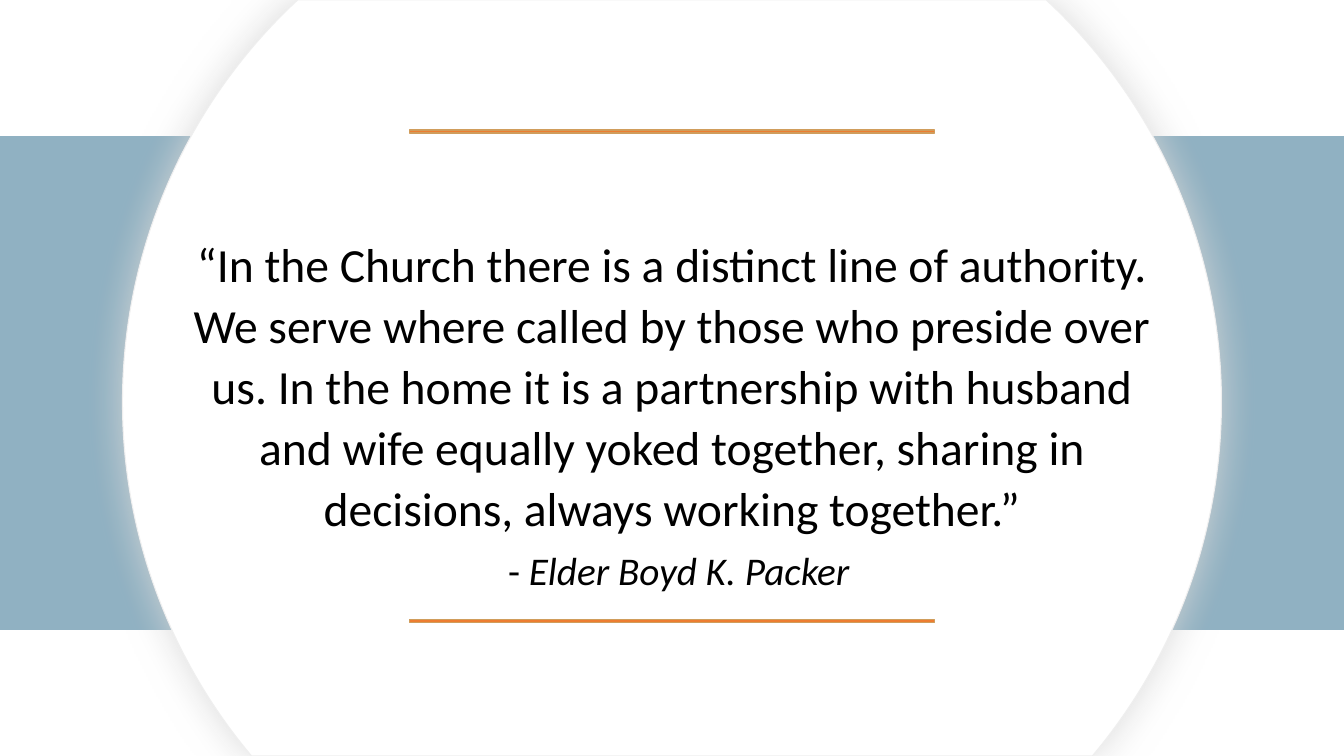
from math import asin, cos, pi, sin, tan

from lxml.etree import SubElement
from pptx import Presentation
from pptx.dml.color import RGBColor
from pptx.enum.shapes import MSO_SHAPE
from pptx.enum.text import MSO_ANCHOR, MSO_AUTO_SIZE, PP_ALIGN
from pptx.oxml.ns import qn
from pptx.util import Inches, Pt

# Content
QUOTE = (
    "“In the Church there is a distinct line of authority. "
    "We serve where called by those who preside over us. "
    "In the home it is a partnership with husband and wife equally yoked "
    "together, sharing in decisions, always working together.”"
)
AUTHOR = [("- ", False), ("Elder Boyd K. Packer", True)]

# Layout in inches
WIDE, HIGH = 13.33, 7.5
MID = WIDE / 2
BAND = (0, 1.35, WIDE, 4.9)
RULE_W, RULE_H = 5.2, 0.03
RULE_TOPS = (1.29, 6.15)
DISC_Y, DISC_R = 3.99, 5.45
UNITS = 1000  # outline units per inch


def color(code):
    return RGBColor.from_string(code)


def paint(shape, fill, line):
    shape.shadow.inherit = False
    shape.fill.solid()
    shape.fill.fore_color.rgb = color(fill)
    shape.line.color.rgb = color(line)
    shape.line.width = Pt(0.75)


def place(shape, *box):
    shape.left, shape.top, shape.width, shape.height = map(Inches, box)


def write(shape, runs, size, align=PP_ALIGN.LEFT, space=1.0,
          anchor=MSO_ANCHOR.MIDDLE):
    frame = shape.text_frame
    frame.auto_size = MSO_AUTO_SIZE.NONE
    frame.word_wrap = True
    frame.vertical_anchor = anchor
    para = frame.paragraphs[0]
    para.alignment, para.line_spacing = align, space
    for text, slant in runs:
        run = para.add_run()
        run.text = text
        run.font.name, run.font.size = "Calibri", Pt(size)
        run.font.italic = slant
        run.font.color.rgb = color("000000")


def bar(slide, box, fill, line):
    shape = slide.shapes.add_shape(MSO_SHAPE.RECTANGLE, *map(Inches, box))
    paint(shape, fill, line)


def spot(turn, pull=0):
    # Point on the circle, moved along its tangent by pull radii
    x = MID + DISC_R * (cos(turn) - pull * sin(turn))
    y = DISC_Y + DISC_R * (sin(turn) + pull * cos(turn))
    return round(x * UNITS), round(y * UNITS)


def bend(line, start, end):
    # Turn one straight segment into a circular arc
    pull = 4 / 3 * tan((end - start) / 4)
    line.tag = qn("a:cubicBezTo")
    line.remove(line[0])
    for x, y in (spot(start, pull), spot(end, -pull), spot(end)):
        SubElement(line, qn("a:pt"), x=str(x - round((MID - DISC_R) * UNITS)),
                   y=str(y))


def disc(slide):
    # Circle cut off by the top and bottom edges of the slide
    high, low = asin(-DISC_Y / DISC_R), asin((HIGH - DISC_Y) / DISC_R)
    turns = [pi - high, high, 0, low, pi - low, pi, pi - high]
    points = [spot(turn) for turn in turns]
    form = slide.shapes.build_freeform(*points[0], scale=Inches(1) / UNITS)
    form.add_line_segments(points[1:], close=True)
    shape = form.convert_to_shape()
    lines = list(shape._element.iter(qn("a:lnTo")))
    for i in (1, 2, 4, 5):
        bend(lines[i], turns[i], turns[i + 1])
    paint(shape, "FFFFFF", "EFEFEF")
    # Soft halo
    glow = SubElement(shape.fill._xPr.find(qn("a:effectLst")),
                      qn("a:outerShdw"), blurRad=str(Pt(28)), dist="0",
                      algn="ctr", rotWithShape="0")
    tint = SubElement(glow, qn("a:srgbClr"), val="D8D8D8")
    SubElement(tint, qn("a:alpha"), val="89000")


def main():
    deck = Presentation()
    deck.slide_width, deck.slide_height = Inches(WIDE), Inches(HIGH)
    slide = deck.slides.add_slide(deck.slide_layouts[5])

    # Band, disc and rules
    bar(slide, BAND, "90B1C2", "90B1C2")
    disc(slide)
    for top in RULE_TOPS:
        bar(slide, (MID - RULE_W / 2, top, RULE_W, RULE_H),
            "ED7D31", "D09D5C")

    # Quote, brought in front of the disc
    title = slide.shapes.title
    slide.shapes._spTree.append(title._element)
    place(title, 1.79, 1.83, 9.75, 3.95)
    write(title, [(QUOTE, False)], 34, PP_ALIGN.CENTER, 1.07)

    # Author
    name = slide.shapes.add_textbox(0, 0, 0, 0)
    place(name, 4.94, 4.9, 4.32, 1.04)
    write(name, AUTHOR, 28, anchor=MSO_ANCHOR.BOTTOM)

    deck.save("out.pptx")


if __name__ == "__main__":
    main()
